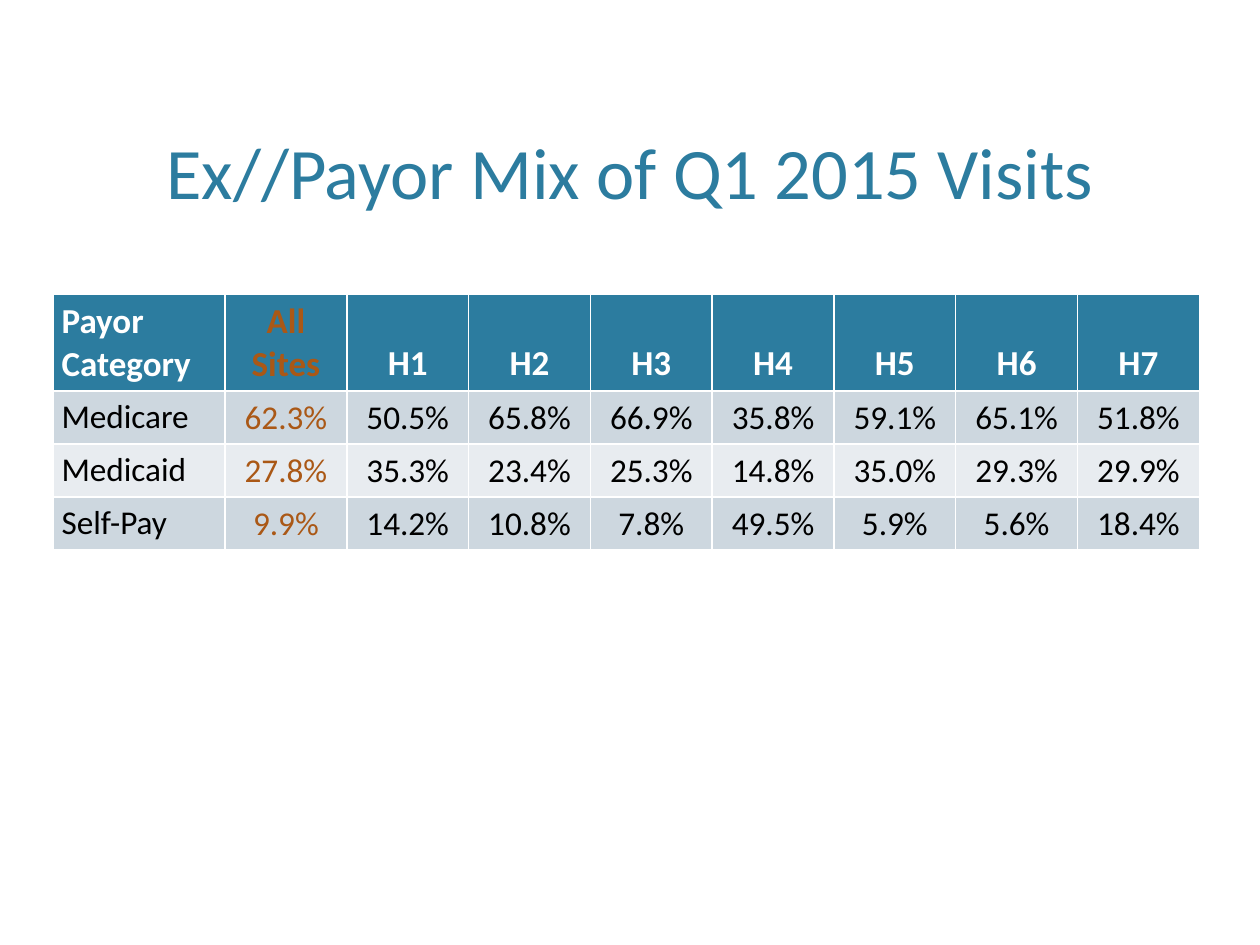
from pptx import Presentation
from pptx.dml.color import RGBColor
from pptx.enum.text import MSO_ANCHOR, PP_ALIGN
from pptx.util import Pt

LEFT, CENTER = PP_ALIGN.LEFT, PP_ALIGN.CENTER
TOP, MIDDLE, BOTTOM = MSO_ANCHOR.TOP, MSO_ANCHOR.MIDDLE, MSO_ANCHOR.BOTTOM

COLORS = {
    "teal": "2C7C9F",
    "orange": "AA5816",
    "white": "FFFFFF",
    "black": "000000",
    "band": "CDD7DF",
    "pale": "E8ECF0",
}

ROWS = [
    ["Payor Category", "All Sites", "H1", "H2", "H3", "H4", "H5", "H6", "H7"],
    ["Medicare", "62.3%", "50.5%", "65.8%", "66.9%", "35.8%", "59.1%", "65.1%", "51.8%"],
    ["Medicaid", "27.8%", "35.3%", "23.4%", "25.3%", "14.8%", "35.0%", "29.3%", "29.9%"],
    ["Self-Pay", "9.9%", "14.2%", "10.8%", "7.8%", "49.5%", "5.9%", "5.6%", "18.4%"],
]


def write(tf, text, size, color, bold=False, align=CENTER):
    tf.word_wrap = True
    p = tf.paragraphs[0]
    p.alignment = align
    r = p.add_run()
    r.text = text
    r.font.name = "Calibri"
    r.font.size = Pt(size)
    r.font.bold = bold
    r.font.color.rgb = RGBColor.from_string(COLORS[color])


prs = Presentation()
prs.slide_width, prs.slide_height = Pt(720), Pt(540)
s = prs.slides.add_slide(prs.slide_layouts[6])

title = s.shapes.add_textbox(Pt(36), Pt(36), Pt(648), Pt(90))
title.text_frame.vertical_anchor = BOTTOM
write(title.text_frame, "Ex//Payor Mix of Q1 2015 Visits", 41.4, "teal")

widths = [98.4] + [69.6] * 8
heights = [55.4] + [30.3] * 3
table = s.shapes.add_table(
    len(ROWS), len(widths), Pt(30.2), Pt(168), Pt(sum(widths)), Pt(sum(heights))
).table
for column, width in zip(table.columns, widths):
    column.width = Pt(width)
for row, height in zip(table.rows, heights):
    row.height = Pt(height)

for i, values in enumerate(ROWS):
    header = i == 0
    fill = "teal" if header else "band" if i % 2 else "pale"
    for j, value in enumerate(values):
        cell = table.cell(i, j)
        cell.fill.solid()
        cell.fill.fore_color.rgb = RGBColor.from_string(COLORS[fill])
        label = j == 0
        if header or label:
            cell.margin_left = cell.margin_right = Pt(5)
            cell.margin_top = cell.margin_bottom = Pt(3.6)
        else:
            cell.margin_left = cell.margin_right = cell.margin_top = Pt(0.7)
            cell.margin_bottom = Pt(0)
        cell.vertical_anchor = TOP if label else BOTTOM if header else MIDDLE
        color = "orange" if j == 1 else "white" if header else "black"
        write(cell.text_frame, value, 20 if header else 19, color,
              bold=header, align=LEFT if label else CENTER)

prs.save("out.pptx")
